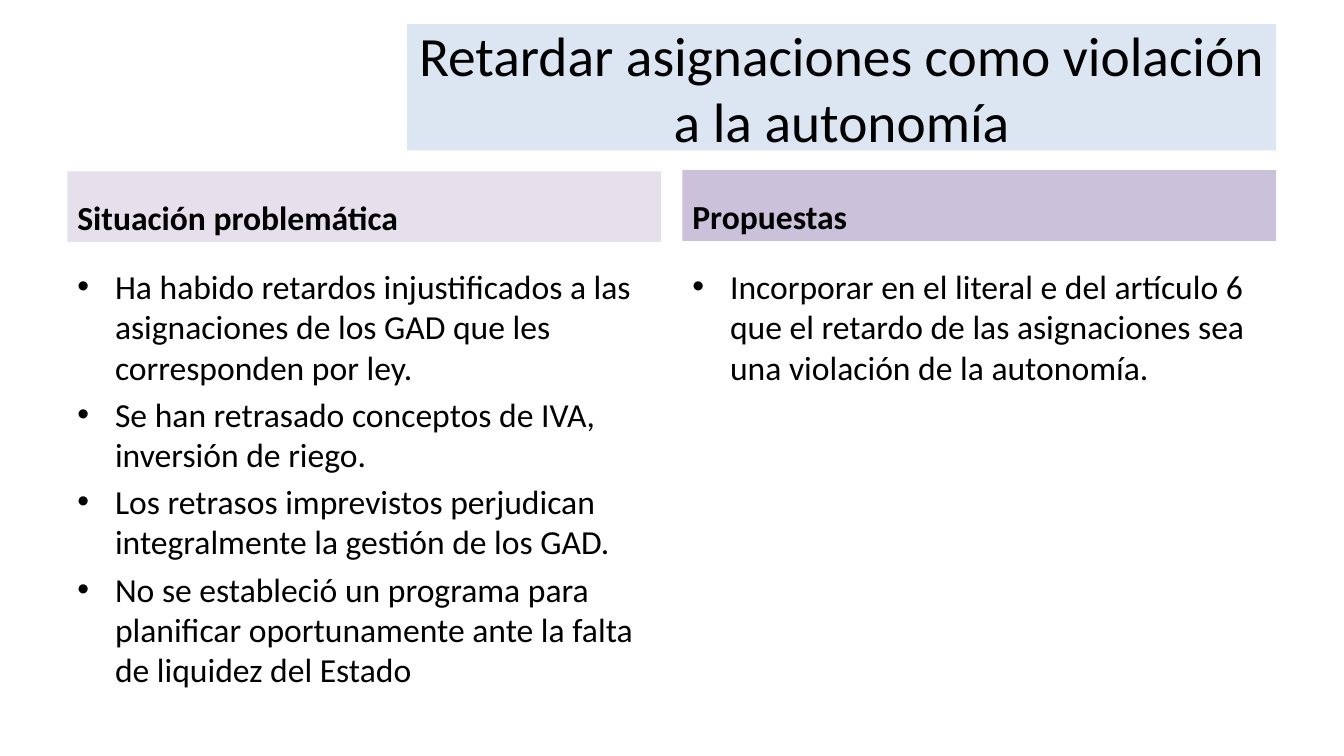
from dataclasses import dataclass

from lxml.etree import SubElement
from pptx import Presentation
from pptx.dml.color import RGBColor
from pptx.enum.text import MSO_ANCHOR as Anchor, PP_ALIGN as Align
from pptx.oxml.ns import qn
from pptx.util import Cm, Pt


@dataclass(frozen=True)
class Theme:
    font: str = "Calibri"
    text: str = "000000"
    title_fill: str = "DCE6F2"
    problem_fill: str = "E6E0EC"
    proposal_fill: str = "CCC1DA"
    title_size: float = 39.6
    body_size: float = 24


theme = Theme()
COLUMN_WIDTH = 14.96
BULLET_INDENT = Cm(0.95)

columns = [
    dict(left=1.7, heading_top=4.32, fill=theme.problem_fill,
         heading="Situación problemática",
         points=[
             "Ha habido retardos injustificados a las asignaciones de los GAD que les corresponden por ley.",
             "Se han retrasado conceptos de IVA, inversión de riego.",
             "Los retrasos imprevistos perjudican integralmente la gestión de los GAD.",
             "No se estableció un programa para planificar oportunamente ante la falta de liquidez del Estado",
         ]),
    dict(left=17.2, heading_top=4.29, fill=theme.proposal_fill,
         heading="Propuestas",
         points=[
             "Incorporar en el literal e del artículo 6 que el retardo de las asignaciones sea una violación de la autonomía.",
         ]),
]

prs = Presentation()
prs.slide_width, prs.slide_height = Cm(33.87), Cm(19.05)
slide = prs.slides.add_slide(prs.slide_layouts[6])


def add_text(box, lines, anchor, fill=None, size=theme.body_size,
             bold=False, align=Align.LEFT, bullets=False):
    """Add a text box at box (left, top, width, height in cm), one paragraph a line."""
    panel = slide.shapes.add_textbox(*map(Cm, box))
    if fill:
        panel.fill.solid()
        panel.fill.fore_color.rgb = RGBColor.from_string(fill)
    frame = panel.text_frame
    frame.word_wrap = True
    frame.vertical_anchor = anchor
    for index, line in enumerate(lines):
        paragraph = frame.add_paragraph() if index else frame.paragraphs[0]
        paragraph.text = line
        paragraph.alignment = align
        if index:
            paragraph.space_before = Pt(0.2 * size)
        if bullets:
            props = paragraph._p.get_or_add_pPr()
            props.set("marL", str(BULLET_INDENT))
            props.set("indent", str(-BULLET_INDENT))
            SubElement(props, qn("a:buFont"), typeface="Arial")
            SubElement(props, qn("a:buChar"), char="•")
        font = paragraph.runs[0].font
        for name, value in dict(name=theme.font, size=Pt(size), bold=bold).items():
            setattr(font, name, value)
        font.color.rgb = RGBColor.from_string(theme.text)


add_text((10.26, 0.61, 21.9, 3.18),
         ["Retardar asignaciones como violación a la autonomía"],
         Anchor.MIDDLE, theme.title_fill, theme.title_size, align=Align.CENTER)

for column in columns:
    add_text((column["left"], column["heading_top"], COLUMN_WIDTH, 1.78),
             [column["heading"]], Anchor.BOTTOM, column["fill"], bold=True)
    add_text((column["left"], 6.58, COLUMN_WIDTH, 10.44),
             column["points"], Anchor.TOP, bullets=True)

prs.save("out.pptx")
